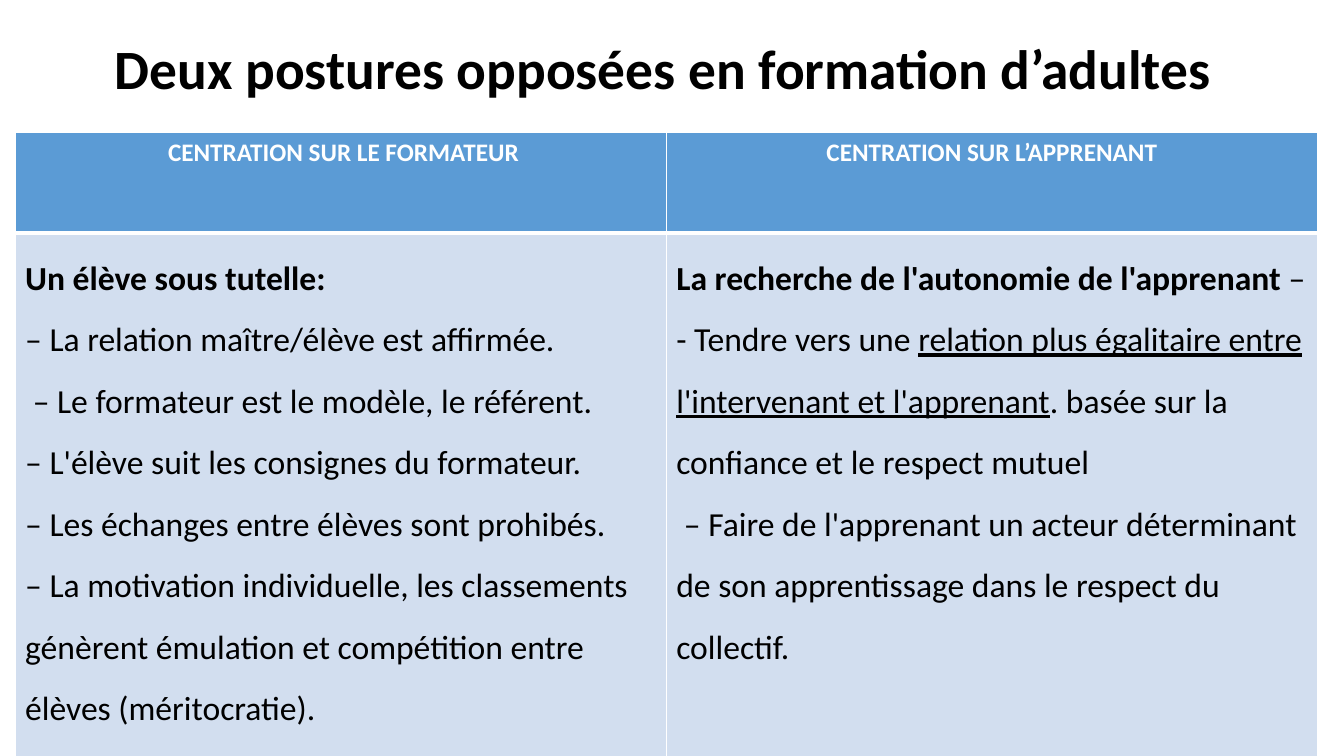
from dataclasses import dataclass

from lxml import etree
from pptx import Presentation
from pptx.dml.color import RGBColor
from pptx.enum import text
from pptx.oxml import ns
from pptx.util import Pt

COLORS = {"ink": "000000", "white": "FFFFFF", "header": "5B9BD5", "body": "D2DEEF"}
FONT = "Calibri"
COLUMN_WIDTH = 465.12


@dataclass(frozen=True)
class Span:
    text: str
    bold: bool = False
    underline: bool = False


@dataclass(frozen=True)
class RowStyle:
    height: float
    fill: str
    ink: str
    size: float
    align: text.PP_ALIGN
    line_spacing: float
    bottom_border: float


@dataclass(frozen=True)
class Posture:
    heading: str
    paragraphs: list[list[Span]]


HEADER = RowStyle(72, "header", "white", 18, text.PP_ALIGN.CENTER, 1.0, 3)
BODY = RowStyle(374, "body", "ink", 24, text.PP_ALIGN.LEFT, 1.5, 1)

POSTURES = [
    Posture(" CENTRATION SUR LE FORMATEUR", [
        [Span("Un élève sous tutelle:", bold=True)],
        [Span("– La relation maître/élève est affirmée.")],
        [Span(" – Le formateur est le modèle, le référent.")],
        [Span("– L'élève suit les consignes du formateur.")],
        [Span("– Les échanges entre élèves sont prohibés.")],
        [Span("– La motivation individuelle, les classements génèrent émulation "
              "et compétition entre élèves (méritocratie).")],
    ]),
    Posture("CENTRATION SUR L’APPRENANT", [
        [
            Span("La recherche de l'autonomie de l'apprenant ", bold=True),
            Span("– - Tendre vers une "),
            Span("relation plus égalitaire entre l'intervenant et l'apprenant",
                 underline=True),
            Span(". basée sur la confiance et le respect mutuel"),
        ],
        [Span(" – Faire de l'apprenant un acteur déterminant de son "
              "apprentissage dans le respect du collectif.")],
    ]),
]


def color(name: str) -> RGBColor:
    return RGBColor.from_string(COLORS[name])


def set_font(font, size: float, ink: str) -> None:
    font.name = FONT
    font.size = Pt(size)
    font.color.rgb = color(ink)


def set_borders(cell, bottom: float) -> None:
    """Draw white cell edges, one point wide except for the bottom one."""
    properties = cell._tc.get_or_add_tcPr()
    widths = {"lnL": 1, "lnR": 1, "lnT": 1, "lnB": bottom}
    for position, (edge, width) in enumerate(widths.items()):
        line = etree.Element(ns.qn(f"a:{edge}"), w=str(Pt(width)))
        fill = etree.SubElement(line, ns.qn("a:solidFill"))
        etree.SubElement(fill, ns.qn("a:srgbClr"), val=COLORS["white"])
        properties.insert(position, line)


def fill_cell(cell, paragraphs: list[list[Span]], style: RowStyle) -> None:
    cell.fill.solid()
    cell.fill.fore_color.rgb = color(style.fill)
    set_borders(cell, style.bottom_border)
    frame = cell.text_frame
    for index, spans in enumerate(paragraphs):
        para = frame.add_paragraph() if index else frame.paragraphs[0]
        para.alignment = style.align
        para.line_spacing = style.line_spacing
        set_font(para.font, style.size, style.ink)
        for span in spans:
            run = para.add_run()
            run.text = span.text
            set_font(run.font, style.size, style.ink)
            run.font.bold = span.bold
            run.font.underline = span.underline


def add_title(page) -> None:
    title = page.shapes.title
    title.left, title.top, title.width, title.height = map(Pt, (66, 16.5, 828, 68.5))
    frame = title.text_frame
    frame.auto_size = text.MSO_AUTO_SIZE.NONE
    frame.vertical_anchor = text.MSO_ANCHOR.MIDDLE
    para = frame.paragraphs[0]
    para.alignment = text.PP_ALIGN.LEFT
    para.line_spacing = 0.9
    run = para.add_run()
    run.text = " Deux postures opposées en formation d’adultes"
    set_font(run.font, 39.6, "ink")
    run.font.bold = True


def add_posture_table(page) -> None:
    styles = (HEADER, BODY)
    table = page.shapes.add_table(
        len(styles), len(POSTURES), Pt(10.8), Pt(94.3),
        Pt(COLUMN_WIDTH * len(POSTURES)), Pt(sum(style.height for style in styles)),
    ).table
    for row, style in zip(table.rows, styles):
        row.height = Pt(style.height)
    for column, posture in enumerate(POSTURES):
        table.columns[column].width = Pt(COLUMN_WIDTH)
        fill_cell(table.cell(0, column), [[Span(posture.heading, bold=True)]], HEADER)
        fill_cell(table.cell(1, column), posture.paragraphs, BODY)


def main() -> None:
    deck = Presentation()
    deck.slide_width, deck.slide_height = Pt(960), Pt(540)
    page = deck.slides.add_slide(deck.slide_layouts.get_by_name("Title Only"))
    page.background.fill.solid()
    page.background.fill.fore_color.rgb = color("white")
    add_title(page)
    add_posture_table(page)
    deck.save("out.pptx")


if __name__ == "__main__":
    main()
